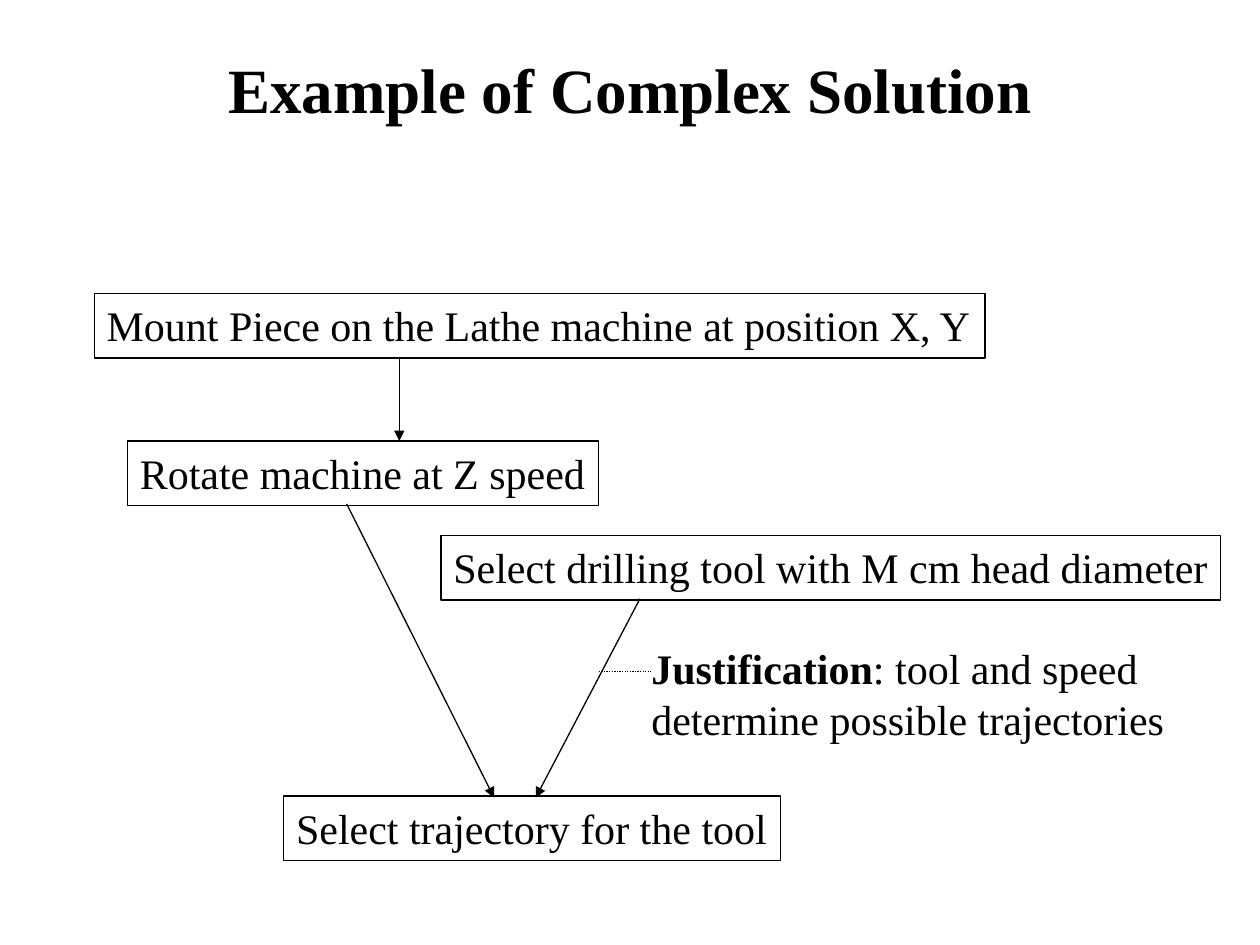
"""Build a slide with a flow diagram of a complex machining solution."""
from pptx import Presentation
from pptx.dml.color import RGBColor
from pptx.enum.dml import MSO_LINE
from pptx.enum.shapes import MSO_CONNECTOR, MSO_SHAPE
from pptx.enum.text import MSO_ANCHOR, MSO_AUTO_SIZE, PP_ALIGN
from pptx.oxml.ns import qn
from pptx.util import Cm, Pt
from lxml.etree import SubElement

BLACK = RGBColor(0, 0, 0)
FONT = "Times New Roman"


def add_run(p, text, size=24, bold=False):
    r = p.add_run()
    r.text = text
    r.font.name = FONT
    r.font.size = Pt(size)
    r.font.bold = bold
    r.font.color.rgb = BLACK


def add_line(s, x1, y1, x2, y2):
    line = s.shapes.add_connector(MSO_CONNECTOR.STRAIGHT, Cm(x1), Cm(y1), Cm(x2), Cm(y2))
    line.line.color.rgb = BLACK
    line.line.width = Pt(0.75)
    SubElement(line._element.spPr, qn("a:effectLst"))
    return line


prs = Presentation()
prs.slide_width, prs.slide_height = Cm(25.4), Cm(19.05)
s = prs.slides.add_slide(prs.slide_layouts[5])

title = s.shapes.title
title.left, title.top, title.width, title.height = Cm(1.9), Cm(0.2), Cm(21.6), Cm(3.18)
title.text_frame.vertical_anchor = MSO_ANCHOR.MIDDLE
p = title.text_frame.paragraphs[0]
p.alignment = PP_ALIGN.CENTER
add_run(p, "Example of Complex Solution", 36, True)

steps = [
    ("Mount Piece on the Lathe machine at position X, Y", 1.9, 5.92, 17.96),
    ("Rotate machine at Z speed", 2.57, 8.89, 9.5),
    ("Select drilling tool with M cm head diameter", 8.89, 10.8, 15.72),
    ("Select trajectory for the tool", 5.72, 16.05, 10.01),
]
for text, x, y, w in steps:
    sp = s.shapes.add_shape(MSO_SHAPE.RECTANGLE, Cm(x), Cm(y), Cm(w), Cm(1.3))
    sp.shadow.inherit = False
    sp.fill.background()
    sp.line.color.rgb = BLACK
    sp.line.width = Pt(0.75)
    tf = sp.text_frame
    tf.word_wrap = False
    tf.auto_size = MSO_AUTO_SIZE.SHAPE_TO_FIT_TEXT
    tf.vertical_anchor = MSO_ANCHOR.TOP
    p = tf.paragraphs[0]
    p.alignment = PP_ALIGN.LEFT
    add_run(p, text)

arrows = [
    (8.05, 7.19, 8.05, 8.89),
    (6.99, 10.16, 9.96, 16.08),
    (12.9, 12.07, 10.8, 16.08),
]
for ends in arrows:
    arrow = add_line(s, *ends)
    SubElement(arrow.line._get_or_add_ln(), qn("a:tailEnd"), type="triangle")

note = s.shapes.add_textbox(Cm(12.88), Cm(12.83), Cm(11.48), Cm(2.29))
tf = note.text_frame
tf.word_wrap = True
tf.auto_size = MSO_AUTO_SIZE.SHAPE_TO_FIT_TEXT
p = tf.paragraphs[0]
add_run(p, "Justification", bold=True)
add_run(p, ": tool and speed determine possible trajectories")
leader = add_line(s, 12.07, 13.54, 13.13, 13.54)
leader.line.dash_style = MSO_LINE.ROUND_DOT

prs.save("out.pptx")
